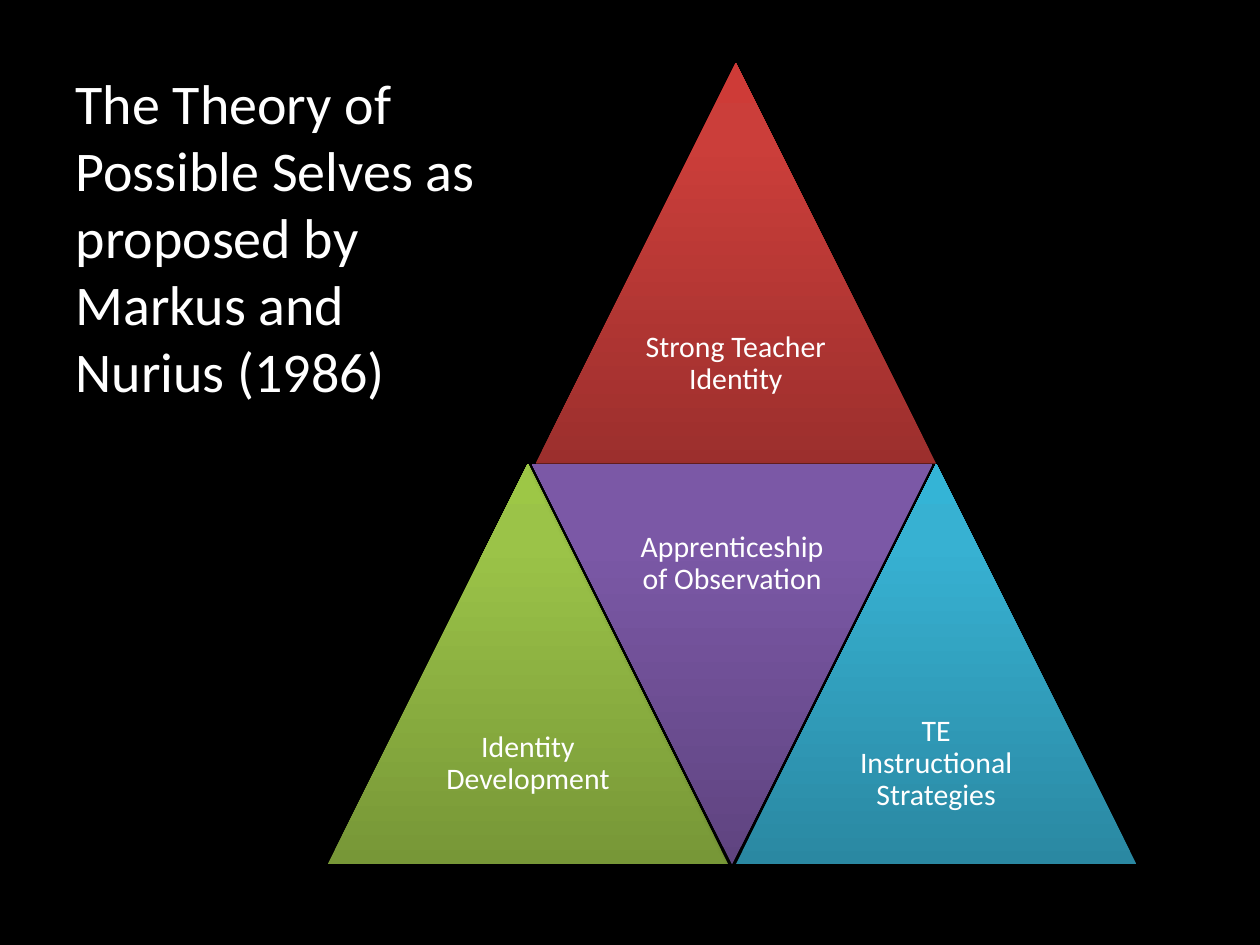
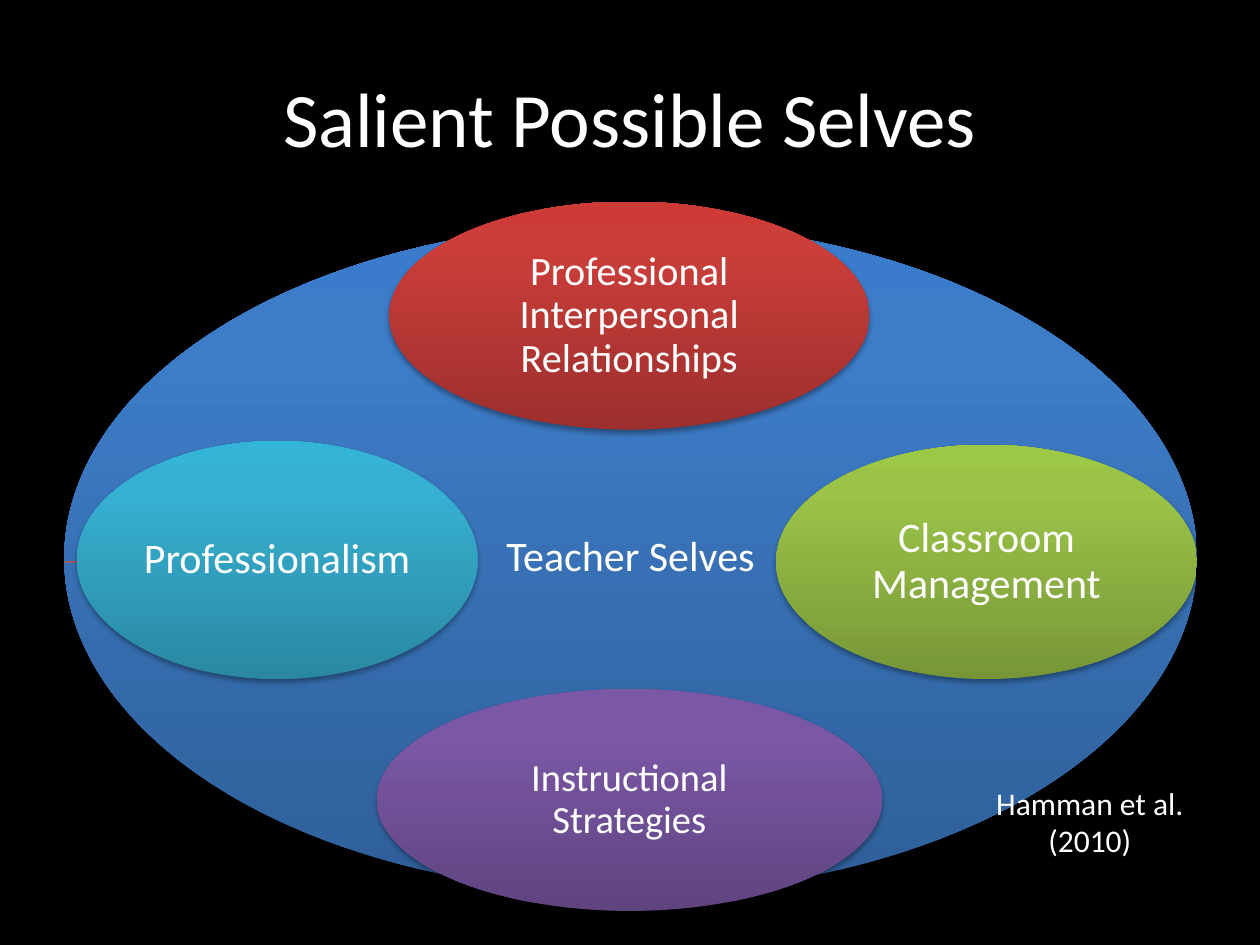
from dataclasses import dataclass

from lxml import etree
from pptx import Presentation
from pptx.dml.color import RGBColor as Rgb
from pptx.enum.shapes import MSO_CONNECTOR as Link, MSO_SHAPE as Kind
from pptx.enum.text import MSO_ANCHOR as Anchor, MSO_AUTO_SIZE as Fit, PP_ALIGN as Align
from pptx.oxml import parse_xml
from pptx.oxml.ns import nsdecls, qn
from pptx.util import Inches, Pt


@dataclass(frozen=True)
class Theme:
    font: str = "Calibri"
    back: str = "000000"
    text: str = "FFFFFF"
    spoke: str = "C0504D"
    # Each gradient runs from the bottom of a shape to its top.
    red: tuple = ("9C2F2D", "CB3E3A", "CE3B37")
    green: tuple = ("779737", "9BC348", "9DC746")
    violet: tuple = ("5F4480", "7B58A6", "7C57A8")
    teal: tuple = ("2A88A2", "37B1D2", "34B4D6")
    blue: tuple = ("2F5F99", "3D7CC7", "3A7CCB")
    stops: tuple = (0, 80, 100)
    title: int = 44
    lead: int = 32
    large: int = 24
    medium: int = 23
    small: int = 22
    cite: int = 18
    label: int = 17


THEME = Theme()


def box(x, y, w, h):
    return [Inches(v) for v in (x, y, w, h)]


def write(shape, text, size, align=Align.CENTER, anchor=Anchor.MIDDLE, inset=None, space=None):
    frame = shape.text_frame
    frame.text = text
    frame.word_wrap = True
    frame.auto_size = Fit.NONE
    frame.vertical_anchor = anchor
    if inset is not None:
        frame.margin_left = frame.margin_right = Inches(inset)
        frame.margin_top = frame.margin_bottom = Inches(inset)
    for para in frame.paragraphs:
        para.alignment = align
        para.line_spacing = space
        for run in para.runs:
            run.font.name = THEME.font
            run.font.size = Pt(size)
            run.font.color.rgb = Rgb.from_string(THEME.text)


def set_title(slide, text, place, size, **style):
    title = slide.shapes.title
    title.left, title.top, title.width, title.height = box(*place)
    write(title, text, size, **style)


def shade(shape, tones):
    """Give the shape a three-stop vertical gradient and a soft shadow."""
    stops = "".join(
        f'<a:gs pos="{stop * 1000}"><a:srgbClr val="{tone}"/></a:gs>'
        for stop, tone in zip(THEME.stops, tones))
    props = shape.element.spPr
    props.append(parse_xml(
        f'<a:gradFill {nsdecls("a")} rotWithShape="0"><a:gsLst>{stops}</a:gsLst>'
        '<a:lin ang="16200000" scaled="0"/></a:gradFill>'))
    shape.line.fill.background()
    props.append(parse_xml(
        f'<a:effectLst {nsdecls("a")}>'
        f'<a:outerShdw blurRad="{Pt(3.1)}" dist="{Pt(1.8)}" dir="5400000" rotWithShape="0">'
        '<a:srgbClr val="000000"><a:alpha val="35000"/></a:srgbClr>'
        '</a:outerShdw></a:effectLst>'))


def add_part(slide, kind, place, tones, text, size, inset):
    part = slide.shapes.add_shape(kind, *box(*place))
    shade(part, tones)
    write(part, text, size, inset=inset, space=0.9)


def add_spoke(slide, start, end):
    line = slide.shapes.add_connector(Link.STRAIGHT, *box(*start, *end))
    line.line.color.rgb = Rgb.from_string(THEME.spoke)
    line.line.width = Pt(0.75)
    etree.SubElement(line.element.spPr, qn("a:effectLst"))


def build_theory(slide):
    set_title(slide, "The Theory of Possible Selves as proposed by Markus and Nurius (1986)",
              (0.5, 0.49, 3.6, 6.21), THEME.lead, align=Align.LEFT, anchor=Anchor.TOP)
    side, step = 3.18, 1.62
    left, top = 2.6, 0.5
    base = top + side
    up, down = Kind.ISOSCELES_TRIANGLE, Kind.FLOWCHART_MERGE
    # The middle label holds the longest word and gets a narrower inset.
    parts = [
        (up, 4.25, top, THEME.red, "Strong Teacher Identity", 0.07),
        (up, left, base, THEME.green, "Identity Development", 0.07),
        (down, left + step, base, THEME.violet, "Apprenticeship of Observation", 0.02),
        (up, left + 2 * step, base, THEME.teal, "TE Instructional Strategies", 0.07),
    ]
    for kind, x, y, tones, text, inset in parts:
        add_part(slide, kind, (x, y, side, side), tones, text, THEME.label, inset)


def build_selves(slide):
    set_title(slide, "Salient Possible Selves", (0.5, 0.3, 9, 1.25), THEME.title)
    add_part(slide, Kind.OVAL, (0.51, 1.77, 8.99, 5.32), THEME.blue,
             "Teacher Selves", THEME.large, 0.02)
    # Each self: its oval, tones, text, type size, and the ends of its spoke.
    selves = [
        ((3.09, 1.6, 3.81, 1.81), THEME.red, "Professional Interpersonal Relationships",
         THEME.medium, (5, 1.77), (5, 3.41)),
        ((6.16, 3.53, 3.34, 1.86), THEME.green, "Classroom Management",
         THEME.large, (9.5, 4.48), (6.16, 4.44)),
        ((2.99, 5.47, 4.01, 1.76), THEME.violet, "Instructional Strategies",
         THEME.small, (5, 7.09), (5, 5.47)),
        ((0.61, 3.5, 3.18, 1.89), THEME.teal, "Professionalism",
         THEME.large, (0.51, 4.46), (3.79, 4.43)),
    ]
    for place, tones, text, size, start, end in selves:
        add_spoke(slide, start, end)
        add_part(slide, Kind.OVAL, place, tones, text, size, 0.02)
    cite = slide.shapes.add_textbox(*box(7.58, 6.17, 2.14, 0.71))
    write(cite, "Hamman et al. (2010)", THEME.cite, anchor=Anchor.TOP)


def main():
    deck = Presentation()
    deck.slide_width, deck.slide_height = Inches(10), Inches(7.5)
    fill = deck.slide_master.background.fill
    fill.solid()
    fill.fore_color.rgb = Rgb.from_string(THEME.back)
    layout = deck.slide_layouts.get_by_name("Title Only")
    for build in (build_theory, build_selves):
        build(deck.slides.add_slide(layout))
    deck.save("out.pptx")


if __name__ == "__main__":
    main()
